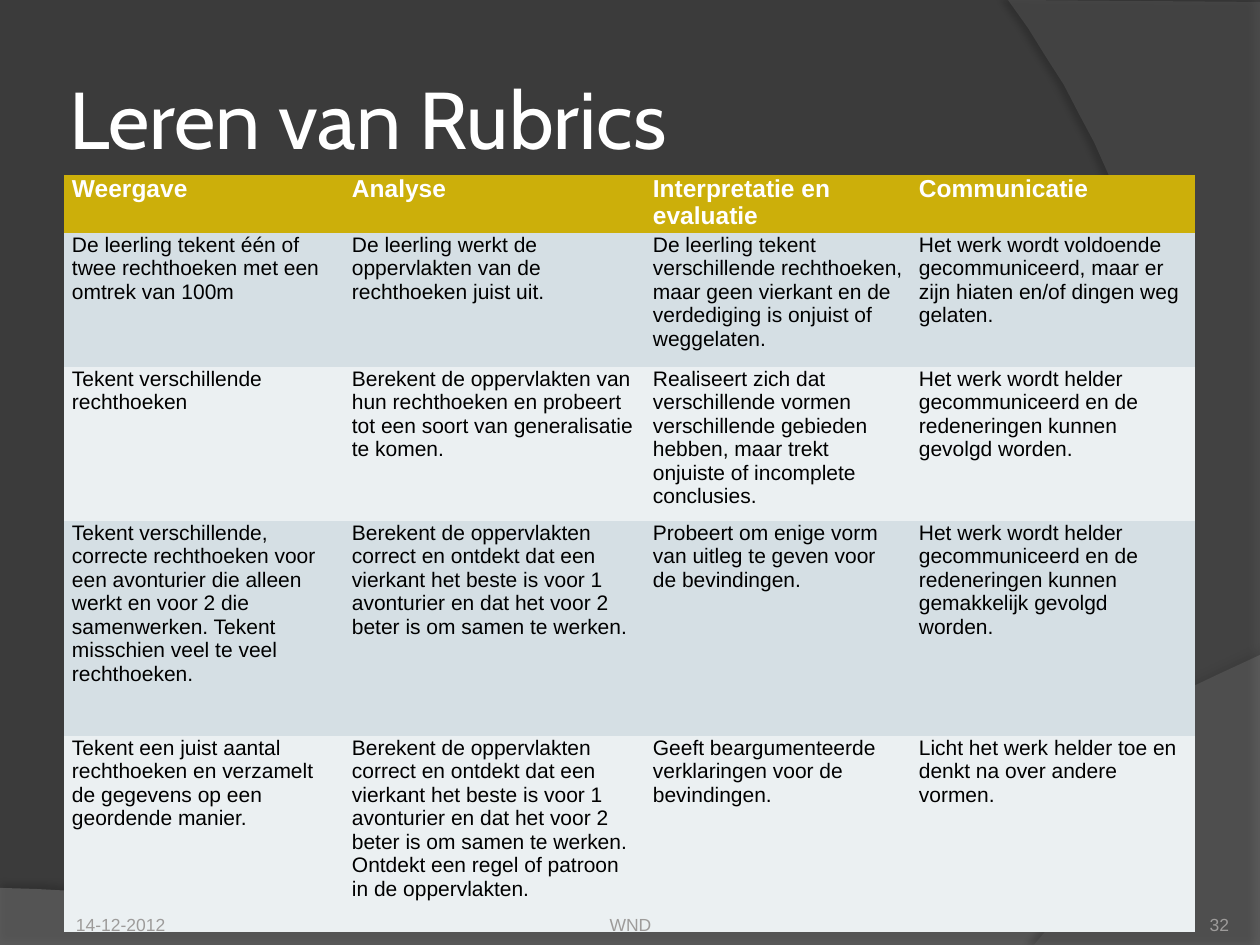
from lxml import etree
from pptx import Presentation
from pptx.dml.color import RGBColor
from pptx.enum.text import MSO_ANCHOR, MSO_AUTO_SIZE, PP_ALIGN
from pptx.oxml.ns import qn
from pptx.util import Emu, Pt

LEFT, CENTER, RIGHT = PP_ALIGN.LEFT, PP_ALIGN.CENTER, PP_ALIGN.RIGHT
TOP, MIDDLE, BOTTOM = MSO_ANCHOR.TOP, MSO_ANCHOR.MIDDLE, MSO_ANCHOR.BOTTOM
NO_FIT = MSO_AUTO_SIZE.NONE
SCALE = 914400 / 126
PLAIN_STYLE = "{2D5ABB26-0587-4C30-8999-92F81FD0307C}"
TITLE_FONT = {"name": "Cabin", "size": Pt(46), "bold": False}
HEADER_FONT = {"name": "Arial", "size": Pt(14), "bold": True}
CELL_FONT = {"name": "Arial", "size": Pt(12), "bold": False}
FOOTER_FONT = {"name": "Arial", "size": Pt(10), "bold": False}
COLUMNS = [280, 301, 266, 284]
ROWS = [58, 134, 154, 215, 196]
RUBRIC = [
    ["Weergave", "Analyse", "Interpretatie en evaluatie", "Communicatie"],
    ["De leerling tekent één of twee rechthoeken met een omtrek van 100m",
     "De leerling werkt de oppervlakten van de rechthoeken juist uit.",
     "De leerling tekent verschillende rechthoeken, maar geen vierkant en de "
     "verdediging is onjuist of weggelaten.",
     "Het werk wordt voldoende gecommuniceerd, maar er zijn hiaten en/of "
     "dingen weg gelaten."],
    ["Tekent verschillende rechthoeken",
     "Berekent de oppervlakten van hun rechthoeken en probeert tot een soort "
     "van generalisatie te komen.",
     "Realiseert zich dat verschillende vormen verschillende gebieden hebben, "
     "maar trekt onjuiste of incomplete conclusies.",
     "Het werk wordt helder gecommuniceerd en de redeneringen kunnen gevolgd "
     "worden."],
    ["Tekent verschillende, correcte rechthoeken voor een avonturier die alleen "
     "werkt en voor 2 die samenwerken. Tekent misschien veel te veel "
     "rechthoeken.",
     "Berekent de oppervlakten correct en ontdekt dat een vierkant het beste is "
     "voor 1 avonturier en dat het voor 2 beter is om samen te werken.",
     "Probeert om enige vorm van uitleg te geven voor de bevindingen.",
     "Het werk wordt helder gecommuniceerd en de redeneringen kunnen "
     "gemakkelijk gevolgd worden."],
    ["Tekent een juist aantal rechthoeken en verzamelt de gegevens op een "
     "geordende manier.",
     "Berekent de oppervlakten correct en ontdekt dat een vierkant het beste is "
     "voor 1 avonturier en dat het voor 2 beter is om samen te werken. Ontdekt "
     "een regel of patroon in de oppervlakten.",
     "Geeft beargumenteerde verklaringen voor de bevindingen.",
     "Licht het werk helder toe en denkt na over andere vormen."],
]


def px(length):
    """Turn px into EMU."""
    return Emu(round(length * SCALE))


def color(value):
    """Turn a hex string into a colour."""
    return RGBColor.from_string(value)


def set_all(target, values):
    """Set each attribute of a target from a dict."""
    for name, value in values.items():
        setattr(target, name, value)


def place(shape, box):
    """Move and size a shape to a box of left, top, width and height."""
    set_all(shape, dict(zip(("left", "top", "width", "height"), map(px, box))))


def write(frame, text, font, hue, align=LEFT):
    """Write one formatted paragraph into a text frame."""
    para = frame.paragraphs[0]
    para.alignment = align
    span = para.add_run()
    span.text = text
    set_all(span.font, font)
    span.font.color.rgb = color(hue)


def set_margins(target, left, top, right, bottom):
    """Set the four inner margins of a frame or cell."""
    set_all(target, {"margin_left": px(left), "margin_top": px(top),
                     "margin_right": px(right), "margin_bottom": px(bottom)})


def curve(start, first, second, end, steps=40):
    """List the points of a cubic curve after its start."""
    def at(t, axis):
        """Give one coordinate of the curve."""
        u = 1 - t
        return (u**3 * start[axis] + 3 * u * u * t * first[axis]
                + 3 * u * t * t * second[axis] + t**3 * end[axis])
    return [(at(i / steps, 0), at(i / steps, 1)) for i in range(1, steps + 1)]


def add_sweep(page, corners, bend, hue, opacity, shadow):
    """Add a translucent background sweep with a curved edge and a shadow."""
    points = corners + curve(corners[-1], *bend)
    builder = page.shapes.build_freeform(*points[0], scale=SCALE)
    builder.add_line_segments(points[1:], close=True)
    shape = builder.convert_to_shape()
    shape.line.fill.background()
    shape.fill.solid()
    shape.fill.fore_color.rgb = color(hue)
    fill = shape.fill._xPr.find(qn("a:solidFill"))[0]
    etree.SubElement(fill, qn("a:alpha"), val=str(opacity * 1000))
    shape.shadow.inherit = False
    effects = shape._element.spPr.find(qn("a:effectLst"))
    angle, strength, distance = shadow
    outer = etree.SubElement(
        effects, qn("a:outerShdw"), blurRad=str(Pt(4)), dist=str(Pt(distance)),
        dir=str(angle * 60000), algn="ctr", rotWithShape="0")
    shade = etree.SubElement(outer, qn("a:srgbClr"), val="000000")
    etree.SubElement(shade, qn("a:alpha"), val=str(strength * 1000))


def add_background(page, box):
    """Fill the page and add its two sweeps."""
    left, top, width, height = box
    right, bottom = left + width, top + height
    page.background.fill.solid()
    page.background.fill.fore_color.rgb = color("3B3B3B")
    add_sweep(page,
              [(left, bottom - 57), (left, bottom), (right, bottom), (right, top + 655)],
              [(left + 704, top + 919), (left + 493, top + 906), (left, bottom - 57)],
              "7F7F7F", 45, (270, 35, 3.5))
    add_sweep(page,
              [(right, top + 2), (right, bottom), (right - 226, bottom)],
              [(right - 82, top + 780), (right + 23, top + 378), (right - 252, top)],
              "5E5E5E", 40, (180, 45, 4))


def add_title(page, box):
    """Fill the title placeholder."""
    title = page.shapes.title
    place(title, box)
    frame = title.text_frame
    set_all(frame, {"auto_size": NO_FIT, "word_wrap": True, "vertical_anchor": MIDDLE})
    set_margins(frame, 6, 6, 6, 6)
    write(frame, "Leren van Rubrics", TITLE_FONT, "FFFFFF")


def add_rubric(page, box):
    """Add the rubric table with a header and alternating row fills."""
    holder = page.shapes.add_table(len(ROWS), len(COLUMNS), *map(px, box))
    table = holder.table
    table._tbl.tblPr.find(qn("a:tableStyleId")).text = PLAIN_STYLE
    table.horz_banding = False
    for column, width in zip(table.columns, COLUMNS):
        column.width = px(width)
    for index, (row, height) in enumerate(zip(table.rows, ROWS)):
        row.height = px(height)
        font, ink = (CELL_FONT, "000000") if index else (HEADER_FONT, "FFFFFF")
        band = ("EBF0F2", "D5DFE4")[index % 2] if index else "CCAF0A"
        for cell, text in zip(row.cells, RUBRIC[index]):
            cell.fill.solid()
            cell.fill.fore_color.rgb = color(band)
            cell.vertical_anchor = TOP
            set_margins(cell, 8, 0, 8, 0)
            write(cell.text_frame, text, font, ink)


def add_footer(page, box):
    """Add the date, the event and the page number along the bottom."""
    left, top, width, height = box
    parts = [("14-12-2012", 0, 294, LEFT, 13), ("WND", 368, 399, CENTER, 0),
             ("32", width - 105, 105, RIGHT, 0)]
    for text, offset, span_width, align, margin in parts:
        area = (left + offset, top, span_width, height)
        frame = page.shapes.add_textbox(*map(px, area)).text_frame
        set_all(frame, {"word_wrap": True, "vertical_anchor": BOTTOM})
        set_margins(frame, margin, 0, margin, 0)
        write(frame, text, FOOTER_FONT, "9D9B9A", align)


def main():
    """Build and save the slide."""
    deck = Presentation()
    set_all(deck, {"slide_width": px(1260), "slide_height": px(945)})
    page = deck.slides.add_slide(deck.slide_layouts[5])
    add_background(page, (0, 0, 1260, 945))
    add_title(page, (63, 38, 1029, 158))
    add_rubric(page, (64, 175, sum(COLUMNS), sum(ROWS)))
    add_footer(page, (63, 885, 1166, 50))
    deck.save("out.pptx")


if __name__ == "__main__":
    main()
